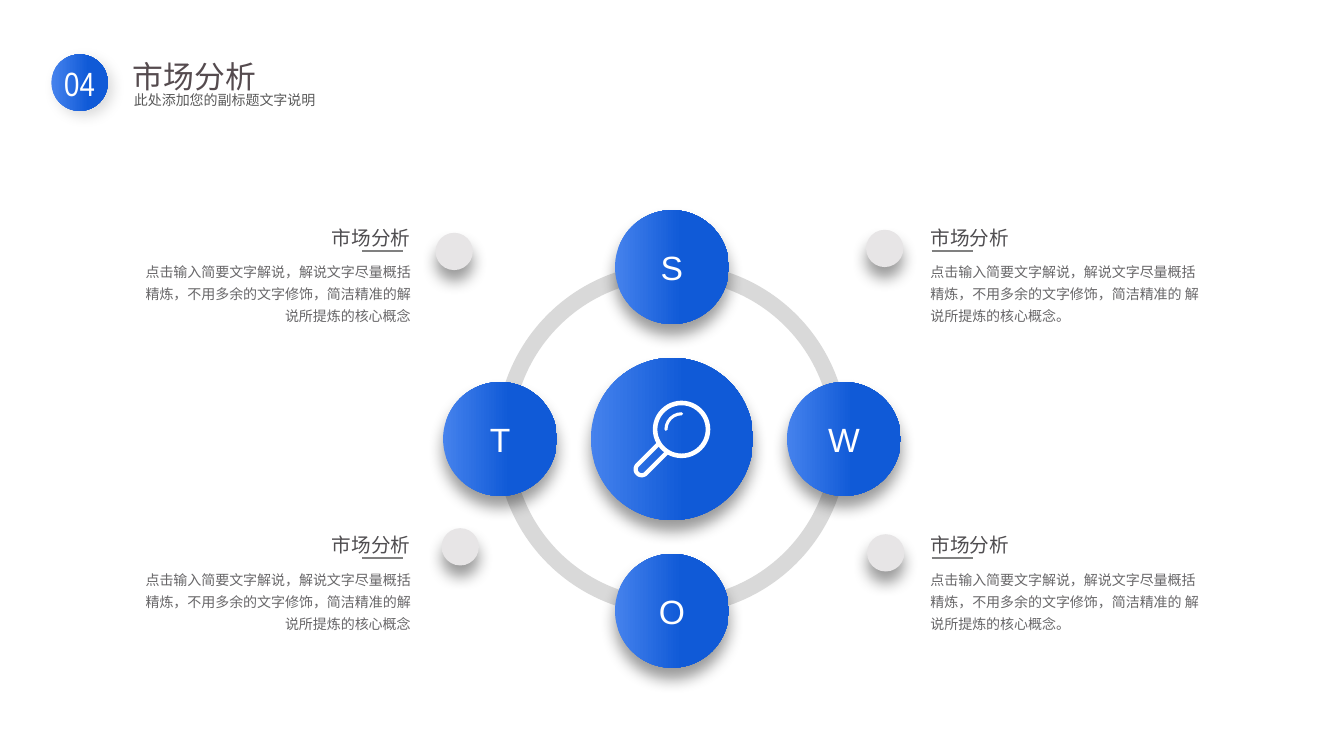
import math

from lxml import etree
from pptx import Presentation
from pptx.dml.color import RGBColor
from pptx.enum import shapes as kinds, text as texts
from pptx.oxml import ns
from pptx.util import Inches, Pt

WHITE = RGBColor(0xFF, 0xFF, 0xFF)
LIGHT_BLUE = RGBColor(0x45, 0x82, 0xED)
DEEP_BLUE = RGBColor(0x10, 0x5A, 0xD7)
RING_GREY = RGBColor(0xD9, 0xD9, 0xD9)
DOT_GREY = RGBColor(0xE7, 0xE5, 0xE6)
RULE_GREY = RGBColor(0x80, 0x80, 0x80)
TITLE = RGBColor(0x55, 0x4B, 0x4F)
SUBTITLE = RGBColor(0x59, 0x59, 0x59)
HEADING = RGBColor(0x4F, 0x4D, 0x50)
BODY = RGBColor(0x68, 0x67, 0x69)
CJK = "Noto Sans CJK SC"
SHAPE = kinds.MSO_SHAPE
ALIGN = texts.PP_ALIGN
DEEP_SHADOW = dict(alpha=40, blur=11, dist=8, angle=90)
SOFT_SHADOW = dict(alpha=15, blur=10, dist=5, angle=45)


def inches(*lengths):
    """Turn plain numbers into lengths."""
    return [Inches(length) for length in lengths]


def assign(target, values):
    """Set every attribute named in values."""
    for name, value in values.items():
        setattr(target, name, value)


def cast_shadow(shape, alpha, blur, dist, angle):
    """Give a shape an outer black shadow."""
    effects = shape._element.spPr.find(ns.qn("a:effectLst"))
    outer = etree.SubElement(effects, ns.qn("a:outerShdw"), blurRad=str(Pt(blur)),
                             dist=str(Pt(dist)), dir=str(angle * 60000),
                             algn="ctr", rotWithShape="0")
    black = etree.SubElement(outer, ns.qn("a:srgbClr"), val="000000")
    etree.SubElement(black, ns.qn("a:alpha"), val=str(alpha * 1000))


def add_plain(shapes, preset, box, color=None):
    """Add a preset shape with a flat fill or none, and no outline."""
    shape = shapes.add_shape(preset, *inches(*box))
    shape.shadow.inherit = False
    shape.line.fill.background()
    if color is None:
        shape.fill.background()
    else:
        shape.fill.solid()
        shape.fill.fore_color.rgb = color
    return shape


def add_blue_disc(shapes, center, size, stops=(0, 0.58), shadow=DEEP_SHADOW):
    """Add a blue gradient disc around a center."""
    x, y = center
    disc = add_plain(shapes, SHAPE.OVAL, (x - size / 2, y - size / 2, size, size))
    disc.fill.gradient()
    disc.fill.gradient_angle = 0
    for stop, position, color in zip(disc.fill.gradient_stops, stops, (LIGHT_BLUE, DEEP_BLUE)):
        assign(stop, dict(position=position))
        stop.color.rgb = color
    cast_shadow(disc, **shadow)
    return disc


def write(shape, words, size, color, font=CJK, frame=None, **paragraph_format):
    """Write one formatted paragraph into a shape."""
    assign(shape.text_frame, frame or {})
    paragraph = shape.text_frame.paragraphs[0]
    assign(paragraph, paragraph_format)
    run = paragraph.add_run()
    run.text = words
    assign(run.font, dict(size=Pt(size), name=font))
    run.font.color.rgb = color
    etree.SubElement(run.font._element, ns.qn("a:ea"), typeface=font)


def add_words(shapes, box, words, size, color, align=ALIGN.LEFT, wrap=True):
    """Add a text box at 1.3 line spacing."""
    frame = dict(word_wrap=wrap, auto_size=texts.MSO_AUTO_SIZE.SHAPE_TO_FIT_TEXT)
    write(shapes.add_textbox(*inches(*box)), words, size, color,
          frame=frame, alignment=align, line_spacing=1.3)


def add_header(slide, left, top):
    """Place the numbered badge, the title and the subtitle."""
    badge = add_blue_disc(slide.shapes, (left + 0.28, top + 0.28), 0.56,
                          (0.01, 0.66), SOFT_SHADOW)
    write(badge, "04", 24, WHITE, "Arial Narrow",
          dict(word_wrap=False, vertical_anchor=texts.MSO_ANCHOR.MIDDLE),
          alignment=ALIGN.CENTER)
    heading = slide.shapes.add_group_shape().shapes
    add_words(heading, (left + 0.71, top - 0.13, 1.44, 0.58), "市场分析", 22, TITLE, wrap=False)
    add_words(heading, (left + 0.72, top + 0.27, 3.38, 0.32),
              "此处添加您的副标题文字说明", 10, SUBTITLE)


def add_magnifier(slide, left, top):
    """Draw the magnifier with its lens, glint and handle."""
    icon = slide.shapes.add_group_shape().shapes
    lens = add_plain(icon, SHAPE.DONUT, (left + 0.19, top, 0.57, 0.57), WHITE)
    lens.adjustments[0] = 0.08
    glint = add_plain(icon, SHAPE.ARC, (left + 0.32, top + 0.13, 0.31, 0.31))
    glint.adjustments[0], glint.adjustments[1] = 108, 162
    x, y, radius = left + 0.08, top + 0.68, 0.06
    cap = [(x + radius * math.cos(math.radians(a)), y + radius * math.sin(math.radians(a)))
           for a in range(225, 44, -10)]
    reach = 0.2
    outline = [(cap[0][0] + reach, cap[0][1] - reach), *cap,
               (cap[-1][0] + reach, cap[-1][1] - reach)]
    points = [inches(*point) for point in outline]
    builder = icon.build_freeform(*points[0])
    builder.add_line_segments(points[1:], close=False)
    handle = builder.convert_to_shape()
    handle.shadow.inherit = False
    handle.fill.background()
    for stroke, width in ((glint, 2.2), (handle, 3)):
        stroke.line.color.rgb = WHITE
        stroke.line.width = Pt(width)
        stroke.line._ln.set("cap", "rnd")


def add_swot_wheel(slide, left, top, size):
    """Draw the ring, its lettered discs and the central magnifier."""
    for start in (108, 54, 0, 162):
        quarter = add_plain(slide.shapes, SHAPE.BLOCK_ARC, (left, top, size, size), RING_GREY)
        for index, value in enumerate((start, (start + 54) % 216, 0.046)):
            quarter.adjustments[index] = value
    x, y = left + size / 2, top + size / 2
    add_blue_disc(slide.shapes, (x, y), 1.61)
    orbit = 1.705
    for letter, across, down in (("S", 0, -1), ("W", 1, 0), ("O", 0, 1), ("T", -1, 0)):
        disc = add_blue_disc(slide.shapes, (x + across * orbit, y + down * orbit), 1.13)
        write(disc, letter, 24, WHITE, "Arial",
              dict(vertical_anchor=texts.MSO_ANCHOR.MIDDLE), alignment=ALIGN.CENTER)
    add_magnifier(slide, x - 0.38, y - 0.38)


def add_callout(slide, left, top, on_left, dot_left, dot_top):
    """Place a dot and its heading, rule and explanation in a 2.87 inch column."""
    dot = add_plain(slide.shapes, SHAPE.OVAL, (dot_left, dot_top, 0.37, 0.37), DOT_GREY)
    cast_shadow(dot, **DEEP_SHADOW)
    if on_left:
        align, heading_shift, rule_shift = ALIGN.RIGHT, 1.42, 2.29
        explanation = "点击输入简要文字解说，解说文字尽量概括精炼，不用多余的文字修饰，简洁精准的解说所提炼的核心概念"
    else:
        align, heading_shift, rule_shift = ALIGN.LEFT, 0, 0.11
        explanation = "点击输入简要文字解说，解说文字尽量概括精炼，不用多余的文字修饰，简洁精准的 解说所提炼的核心概念。"
    parts = slide.shapes.add_group_shape().shapes
    add_words(parts, (left + heading_shift, top, 1.45, 0.41), "市场分析", 14, HEADING, align)
    add_words(parts, (left, top + 0.4, 2.87, 0.76), explanation, 10, BODY, align)
    start, level = left + rule_shift, top + 0.37
    rule = parts.add_connector(kinds.MSO_CONNECTOR.STRAIGHT,
                               *inches(start, level, start + 0.41, level))
    rule.line.color.rgb = RULE_GREY
    rule.line.width = Pt(1.5)
    etree.SubElement(rule._element.spPr, ns.qn("a:effectLst"))


def main():
    """Build the market analysis slide."""
    deck = Presentation()
    assign(deck, dict(slide_width=Inches(13.33), slide_height=Inches(7.5)))
    slide = deck.slides.add_slide(deck.slide_layouts[6])
    add_swot_wheel(slide, 4.92, 2.61, 3.49)
    for callout in ((9.13, 2.12, False, 8.59, 2.28), (1.3, 2.12, True, 4.32, 2.31),
                    (9.13, 5.17, False, 8.6, 5.3), (1.3, 5.17, True, 4.38, 5.24)):
        add_callout(slide, *callout)
    add_header(slide, 0.51, 0.54)
    deck.save("out.pptx")


if __name__ == "__main__":
    main()
